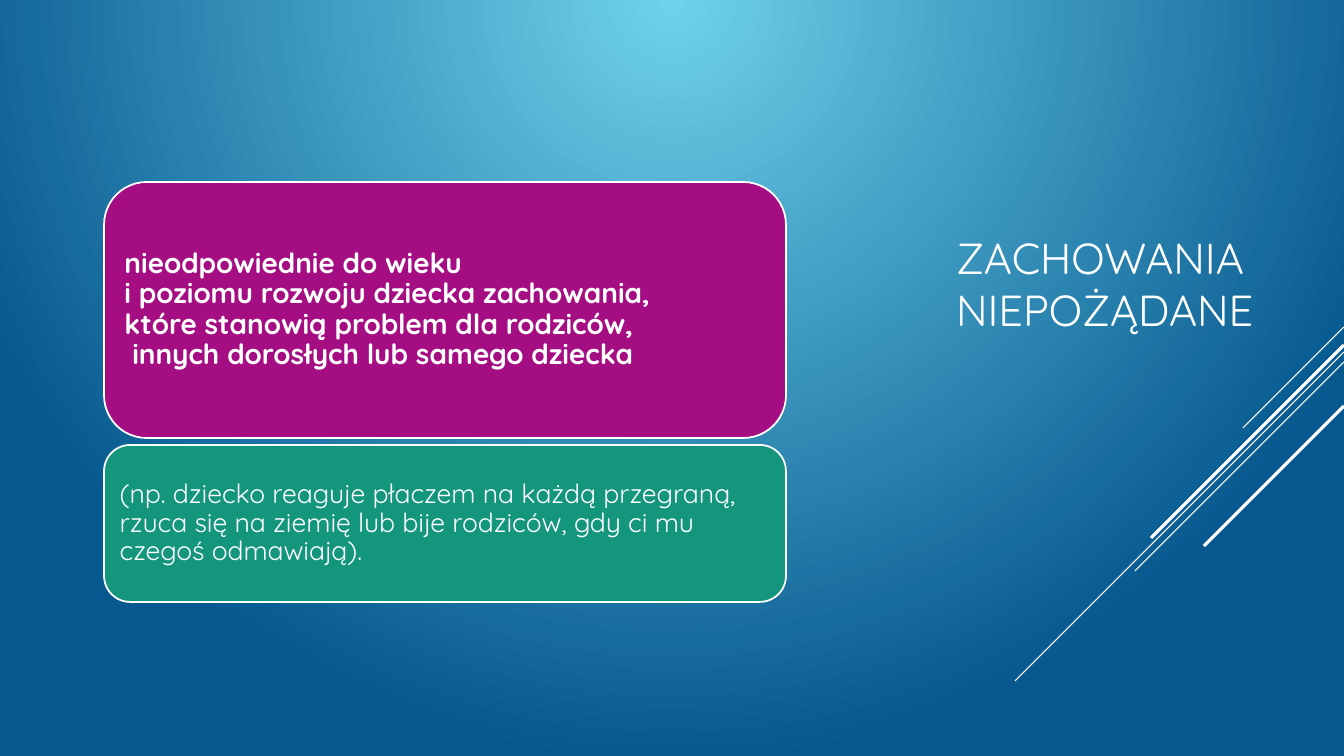
from dataclasses import dataclass

from lxml import etree
from pptx import Presentation
from pptx import util as u
from pptx.dml.color import RGBColor
from pptx.enum import shapes, text
from pptx.oxml.ns import qn

TITLE = "ZACHOWANIA NIEPOŻĄDANE"
TITLE_BOX = (946, 104, 336, 358)

# text, top, height, fill, size, bold
CARDS = [
    ("nieodpowiednie do wieku\vi poziomu rozwoju dziecka zachowania,\v"
     "które stanowią problem dla rodziców,\v innych dorosłych lub samego dziecka",
     182, 256, "A50E82", 20, True),
    ("(np. dziecko reaguje płaczem na każdą przegraną, rzuca się na ziemię "
     "lub bije rodziców, gdy ci mu czegoś odmawiają).",
     445, 157, "14967C", 19, False),
]
CARD_X, CARD_W, PAD = 104, 682, 8

# Diagonals from the right edge: start y, run (down and left), line width
RAYS = [(327, 101, 0.75), (352, 329, 0.75), (362, 209, 0.75),
        (345, 193, 2.25), (406, 140, 2.25)]

WIDE, HIGH = 1344, 756


@dataclass(frozen=True)
class Theme:
    font: str = "Quicksand"
    ink: str = "FFFFFF"
    glow: str = "6ED2EB"
    deep: str = "06588E"
    title: int = 31
    edge: float = 1.25


THEME = Theme()


def px(n):
    return u.Emu(round(n * 914400 / 100.8))


def rgb(code):
    return RGBColor.from_string(code)


def write(frame, words, size, bold=False):
    frame.text = words
    frame.word_wrap = True
    frame.auto_size = text.MSO_AUTO_SIZE.NONE
    frame.vertical_anchor = text.MSO_ANCHOR.MIDDLE
    para = frame.paragraphs[0]
    para.alignment = text.PP_ALIGN.LEFT
    for run in para.runs:
        font = run.font
        font.name, font.size, font.bold = THEME.font, u.Pt(size), bold
        font.color.rgb = rgb(THEME.ink)
    return para


def paint(slide):
    """Give the slide a round gradient that glows from the top centre."""
    fill = slide.background.fill
    fill.gradient()
    for stop, code, pos in zip(fill.gradient_stops, (THEME.glow, THEME.deep), (0, 1)):
        stop.color.rgb = rgb(code)
        stop.position = pos
    lin = next(slide.background._cSld.iter(qn("a:lin")))
    ring = etree.Element(qn("a:path"), {"path": "circle"})
    etree.SubElement(ring, qn("a:fillToRect"), {"b": "100000"})
    lin.getparent().replace(lin, ring)


def add_ray(slide, top, run, width):
    ray = slide.shapes.add_connector(
        shapes.MSO_CONNECTOR.STRAIGHT,
        px(WIDE), px(top), px(WIDE - run), px(top + run))
    ray.line.color.rgb = rgb(THEME.ink)
    ray.line.width = u.Pt(width)
    etree.SubElement(ray._element.spPr, qn("a:effectLst"))


def add_card(slide, words, top, high, fill, size, bold):
    card = slide.shapes.add_shape(
        shapes.MSO_SHAPE.ROUNDED_RECTANGLE,
        px(CARD_X), px(top), px(CARD_W), px(high))
    card.shadow.inherit = False
    card.fill.solid()
    card.fill.fore_color.rgb = rgb(fill)
    card.line.color.rgb = rgb(THEME.ink)
    card.line.width = u.Pt(THEME.edge)
    frame = card.text_frame
    frame.margin_left = frame.margin_right = px(PAD)
    frame.margin_top = frame.margin_bottom = px(PAD)
    write(frame, words, size, bold).line_spacing = 0.9


def main():
    deck = Presentation()
    deck.slide_width, deck.slide_height = px(WIDE), px(HIGH)
    slide = deck.slides.add_slide(deck.slide_layouts[5])
    paint(slide)
    for ray in RAYS:
        add_ray(slide, *ray)
    title = slide.shapes.title
    title.left, title.top, title.width, title.height = map(px, TITLE_BOX)
    write(title.text_frame, TITLE, THEME.title)
    for card in CARDS:
        add_card(slide, *card)
    deck.save("out.pptx")


if __name__ == "__main__":
    main()
